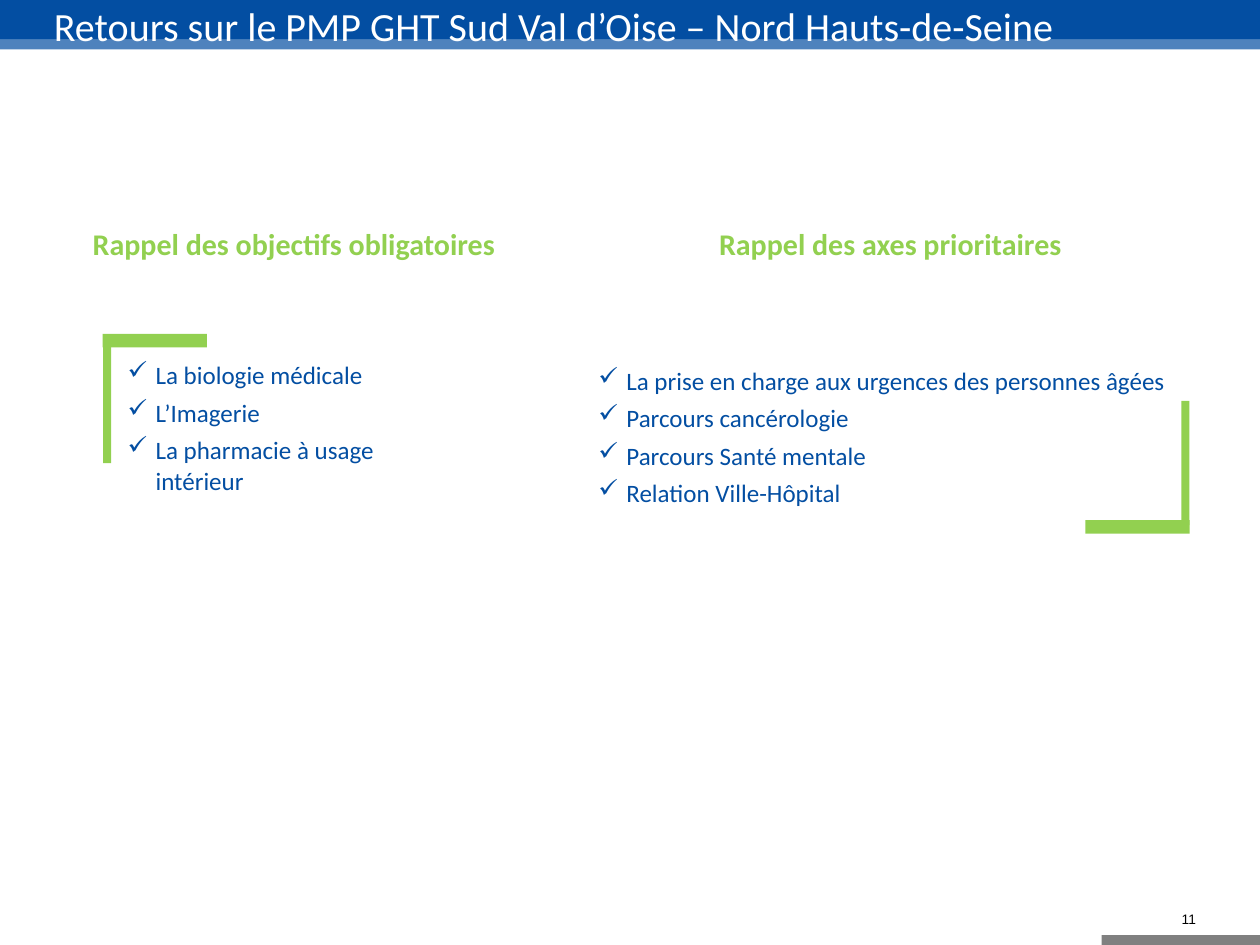
from lxml import etree
from pptx import Presentation
from pptx import util as u
from pptx.dml.color import RGBColor
from pptx.enum import shapes, text
from pptx.oxml.ns import qn

COLORS = {"blue": "034EA2", "green": "92D050", "grey": "808080",
          "white": "FFFFFF", "black": "000000"}

deck = Presentation()
deck.slide_width, deck.slide_height = u.Inches(14), u.Inches(10.5)
COL, ROW = deck.slide_width / 140, deck.slide_height / 105
slide = deck.slides.add_slide(deck.slide_layouts[6])


def place(col, row, cols, rows):
    return [round(n) for n in (col * COL, row * ROW, cols * COL, rows * ROW)]


def write(area, lines, size, color, font="Calibri", bold=False, bullet=None,
          align=text.PP_ALIGN.LEFT, anchor=text.MSO_ANCHOR.TOP,
          insets=(0, 0, 0, 0), wrap=True):
    frame = slide.shapes.add_textbox(*place(*area)).text_frame
    frame.word_wrap = wrap
    frame.auto_size = text.MSO_AUTO_SIZE.NONE if wrap else text.MSO_AUTO_SIZE.SHAPE_TO_FIT_TEXT
    frame.vertical_anchor = anchor
    (frame.margin_left, frame.margin_top,
     frame.margin_right, frame.margin_bottom) = [u.Inches(i) for i in insets]
    for number, line in enumerate(lines):
        paragraph = frame.add_paragraph() if number else frame.paragraphs[0]
        paragraph.alignment = align
        run = paragraph.add_run()
        run.text = line
        run.font.size, run.font.name, run.font.bold = u.Pt(size), font, bold
        run.font.color.rgb = RGBColor.from_string(COLORS[color])
        if bullet:
            paragraph.level = 1
            paragraph.space_after = u.Pt(6)
            properties = paragraph._p.get_or_add_pPr()
            properties.set("marL", str(u.Inches(0.77)))
            properties.set("indent", str(-u.Inches(0.31)))
            etree.SubElement(properties, qn("a:buChar")).set("char", bullet)


bars = [
    ((0, 4.4, 140, 1.1), "blue", 70),
    ((0, 0, 140, 4.4), "blue", 100),
    ((122.4, 103.9, 17.6, 1.1), "grey", 100),
    ((11.4, 37.1, 11.6, 1.5), "green", 100),
    ((11.45, 37.65, 0.9, 13.8), "green", 100),
    ((120.6, 57.8, 11.6, 1.5), "green", 100),
    ((131.25, 44.55, 0.9, 13.8), "green", 100),
]
for area, color, opacity in bars:
    bar = slide.shapes.add_shape(shapes.MSO_SHAPE.RECTANGLE, *place(*area))
    bar.shadow.inherit = False
    bar.fill.solid()
    bar.fill.fore_color.rgb = RGBColor.from_string(COLORS[color])
    bar.line.fill.background()
    if opacity < 100:
        tint = bar.fill._xPr.find(qn("a:solidFill"))[0]
        etree.SubElement(tint, qn("a:alpha")).set("val", str(opacity * 1000))

write((6, 0.5, 127.3, 4.6), ["Retours sur le PMP GHT Sud Val d’Oise – Nord Hauts-de-Seine"],
      32, "white", anchor=text.MSO_ANCHOR.MIDDLE)

sections = [
    ("Rappel des objectifs obligatoires", (10.3, 24.6, 47.2, 5),
     (8.6, 39.5, 40.9, 24.2), (0.1, 0.05, 0.1, 0.05),
     ["La biologie médicale", "L’Imagerie", "La pharmacie à usage intérieur"]),
    ("Rappel des axes prioritaires", (79.9, 24.6, 39.4, 5),
     (60.6, 39.9, 71.6, 18.7), (0.13, 0.07, 0.13, 0.07),
     ["La prise en charge aux urgences des personnes âgées", "Parcours cancérologie",
      "Parcours Santé mentale", "Relation Ville-Hôpital"]),
]
for heading, heading_area, list_area, list_insets, items in sections:
    write(heading_area, [heading], 24, "green", bold=True,
          insets=(0, 0.05, 0.1, 0.05), wrap=False)
    write(list_area, items, 20, "blue", bullet="✓", insets=list_insets)

write((115.7, 101.2, 17.6, 1.9), ["11"], 11, "black", font="Arial",
      align=text.PP_ALIGN.RIGHT, anchor=text.MSO_ANCHOR.MIDDLE, insets=(0.04, 0, 0.04, 0))

deck.save("out.pptx")
